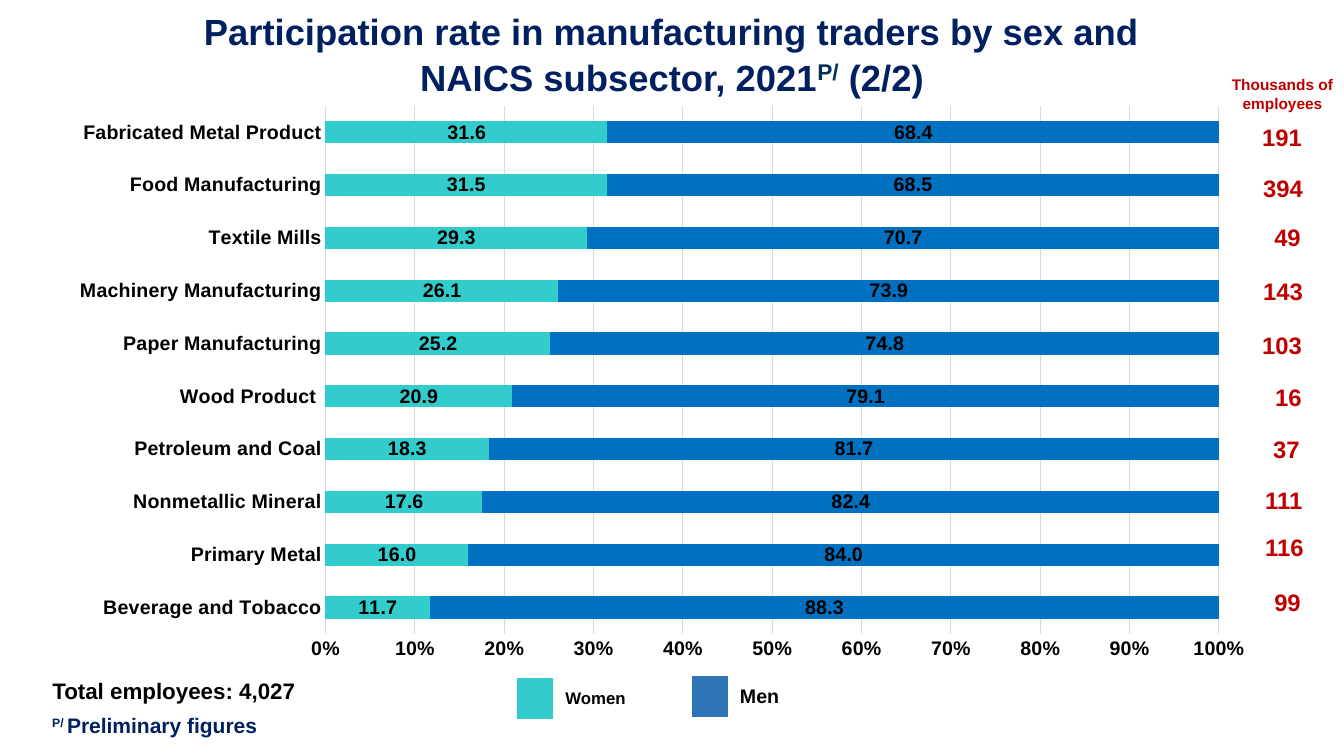
from pptx import Presentation
from pptx.chart.data import CategoryChartData
from pptx.dml.color import RGBColor
from pptx.enum.chart import XL_CHART_TYPE, XL_LABEL_POSITION, XL_TICK_MARK
from pptx.enum.shapes import MSO_SHAPE
from pptx.enum.text import MSO_ANCHOR, MSO_AUTO_SIZE, PP_ALIGN
from pptx.oxml import parse_xml
from pptx.util import Inches, Pt

FONT = "Arial"
COLORS = {"women": "33CCCC", "men": "0070C0", "men_key": "2E75B6", "red": "C00000",
          "navy": "002060", "teal": "033057", "grid": "D9D9D9", "black": "000000",
          "white": "FFFFFF"}

# subsector, women %, men %, thousands of employees, left and top of that number
SUBSECTORS = [
    ("Fabricated Metal Product", 31.6, 68.4, "191", 12.42, 1.17),
    ("Food Manufacturing", 31.5, 68.5, "394", 12.43, 1.67),
    ("Textile Mills", 29.3, 70.7, "49", 12.54, 2.16),
    ("Machinery Manufacturing", 26.1, 73.9, "143", 12.43, 2.7),
    ("Paper Manufacturing", 25.2, 74.8, "103", 12.42, 3.23),
    ("Wood Product ", 20.9, 79.1, "16", 12.55, 3.75),
    ("Petroleum and Coal", 18.3, 81.7, "37", 12.53, 4.26),
    ("Nonmetallic Mineral", 17.6, 82.4, "111", 12.45, 4.77),
    ("Primary Metal", 16.0, 84.0, "116", 12.45, 5.24),
    ("Beverage and Tobacco", 11.7, 88.3, "99", 12.54, 5.78),
]
# runs are (text, size, colour, superscript)
TITLE = [
    [("Participation rate in manufacturing traders by sex and", 26, "navy", False)],
    [("NAICS subsector, 2021", 26, "navy", False), ("P/", 28, "teal", True),
     (" (2/2)", 26, "navy", False)],
]
FOOTNOTE = [("P/ ", 15, "navy", True), ("Preliminary figures", 15, "navy", False)]
# label, size, label left, top, key colour, key left, key top
LEGEND = [("Women", 12, 5.51, 6.77, "women", 5.13, 6.73),
          ("Men", 14, 7.24, 6.74, "men_key", 6.87, 6.71)]
CHART_BOX = (0.54, 0.94, 12.04, 5.72)
PLOT_BOX = (3.23, 1.05, 8.86, 5.24)


def rgb(name):
    return RGBColor.from_string(COLORS[name])


def style(font, size, color):
    font.name, font.size, font.bold = FONT, Pt(size), True
    font.color.rgb = rgb(color)


def add_runs(p, runs):
    for text, size, color, raised in runs:
        r = p.add_run()
        r.text = text
        style(r.font, size, color)
        if raised:
            r._r.get_or_add_rPr().set("baseline", "30000")


def add_box(shapes, box, fill=None, line=None):
    """Add a rectangle when there is a fill, otherwise a text box."""
    box = [Inches(v) for v in box]
    if fill is None:
        return shapes.add_textbox(*box)
    sp = shapes.add_shape(MSO_SHAPE.RECTANGLE, *box)
    sp.shadow.inherit = False
    sp.fill.solid()
    sp.fill.fore_color.rgb = rgb(fill)
    if line:
        sp.line.color.rgb = rgb(line)
        sp.line.width = Pt(0.75)
    else:
        sp.line.fill.background()
    return sp


def add_text(shapes, box, runs, fill=None, wrap=True, align=PP_ALIGN.LEFT):
    tf = add_box(shapes, box, fill).text_frame
    tf.word_wrap = wrap
    tf.vertical_anchor = MSO_ANCHOR.TOP
    tf.paragraphs[0].alignment = align
    add_runs(tf.paragraphs[0], runs)


def add_title(s):
    title = s.shapes.title
    title.left, title.top = Inches(0), Inches(0.05)
    title.width, title.height = Inches(13.33), Inches(0.98)
    tf = title.text_frame
    tf.auto_size = MSO_AUTO_SIZE.NONE
    tf.vertical_anchor = MSO_ANCHOR.MIDDLE
    for i, runs in enumerate(TITLE):
        p = tf.add_paragraph() if i else tf.paragraphs[0]
        p.alignment = PP_ALIGN.CENTER
        add_runs(p, runs)


def fix_plot_area(chart):
    """Pin the inner plot area to PLOT_BOX, as fractions of the chart."""
    cx, cy, cw, ch = CHART_BOX
    px, py, pw, ph = PLOT_BOX
    parts = {"x": (px - cx) / cw, "y": (py - cy) / ch, "w": pw / cw, "h": ph / ch}
    modes = "".join(f'<c:{k}Mode val="edge"/>' for k in "xy")
    sizes = "".join(f'<c:{k} val="{v:.4f}"/>' for k, v in parts.items())
    layout = parse_xml(
        '<c:layout xmlns:c="http://schemas.openxmlformats.org/drawingml/2006/chart">'
        f'<c:manualLayout><c:layoutTarget val="inner"/>{modes}{sizes}'
        '</c:manualLayout></c:layout>')
    plot_area = chart._chartSpace.chart.plotArea
    for old in plot_area.findall(layout.tag):
        plot_area.remove(old)
    plot_area.insert(0, layout)


def add_bars(s):
    rows = SUBSECTORS[::-1]
    data = CategoryChartData(number_format="0.0")
    data.categories = [row[0] for row in rows]
    data.add_series("Women", [row[1] for row in rows])
    data.add_series("Men", [row[2] for row in rows])
    chart = s.shapes.add_chart(XL_CHART_TYPE.BAR_STACKED_100,
                               *[Inches(v) for v in CHART_BOX], data).chart
    chart.has_legend = chart.has_title = False
    style(chart.font, 14, "black")
    fix_plot_area(chart)

    plot = chart.plots[0]
    plot.gap_width, plot.overlap, plot.vary_by_categories = 150, 100, False
    for series, color in zip(plot.series, ("women", "men")):
        series.format.fill.solid()
        series.format.fill.fore_color.rgb = rgb(color)
        series.format.line.color.rgb = rgb(color)
        series.format.line.width = Pt(0.75)
        labels = series.data_labels
        labels.show_value = True
        labels.position = XL_LABEL_POSITION.CENTER
        labels.number_format, labels.number_format_is_linked = "0.0", False
        style(labels.font, 14, "black")

    cats, vals = chart.category_axis, chart.value_axis
    for axis in (cats, vals):
        axis.major_tick_mark = axis.minor_tick_mark = XL_TICK_MARK.NONE
        style(axis.tick_labels.font, 14, "black")
    vals.has_major_gridlines = True
    for line in (cats.format.line, vals.major_gridlines.format.line):
        line.color.rgb = rgb("grid")
        line.width = Pt(0.75)
    vals.format.line.fill.background()
    vals.minimum_scale, vals.maximum_scale, vals.major_unit = 0, 1, 0.1
    vals.tick_labels.number_format = "0%"
    vals.tick_labels.number_format_is_linked = False


def main():
    prs = Presentation()
    prs.slide_width, prs.slide_height = Inches(13.33), Inches(7.5)
    s = prs.slides.add_slide(prs.slide_layouts[5])
    add_title(s)
    add_bars(s)

    employees = s.shapes.add_group_shape().shapes
    for *_, number, left, top in SUBSECTORS:
        width = 0.6 if len(number) == 3 else 0.47
        add_text(employees, (left, top, width, 0.39), [(number, 17, "red", False)], wrap=False)
    add_text(s.shapes, (12.11, 0.7, 1.22, 0.47),
             [("Thousands of employees", 11, "red", False)], align=PP_ALIGN.CENTER)

    for label, size, left, top, color, key_left, key_top in LEGEND:
        add_text(s.shapes, (left, top, 0.85, 0.47), [(label, size, "black", False)], "white")
        add_box(s.shapes, (key_left, key_top, 0.35, 0.4), color, color)

    add_text(s.shapes, (0.42, 6.67, 4.21, 0.37),
             [("Total employees: 4,027", 16, "black", False)], "white")
    add_text(s.shapes, (0.42, 7.02, 2.67, 0.35), FOOTNOTE)
    prs.save("out.pptx")


if __name__ == "__main__":
    main()
